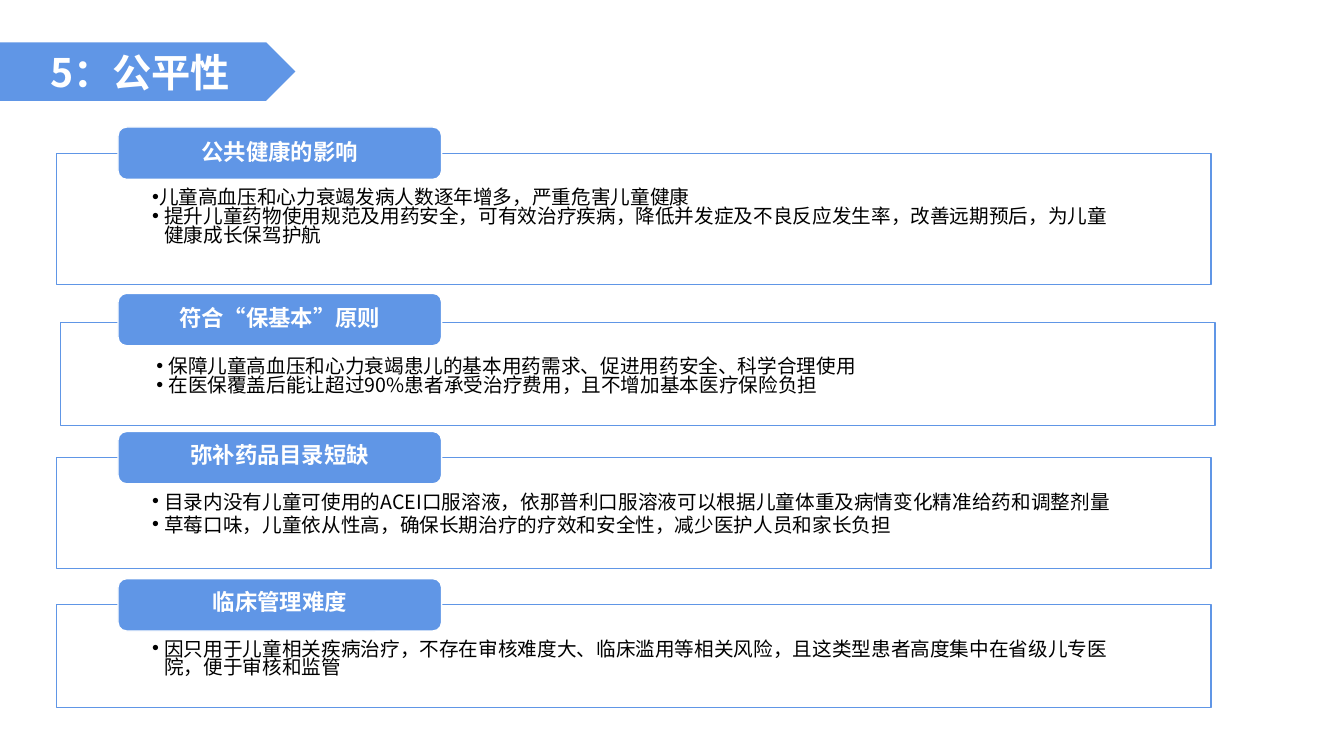
"""Build the fairness slide with a banner title and four labelled lists."""
from lxml.etree import SubElement as Sub
from pptx import Presentation
from pptx.dml.color import RGBColor
from pptx.enum.shapes import MSO_SHAPE as Kind
from pptx.enum.text import MSO_ANCHOR as Anchor, MSO_AUTO_SIZE as Auto, PP_ALIGN as Align
from pptx.oxml.ns import qn
from pptx.util import Inches, Pt

BLUE, WHITE, BLACK = "6096E6", "FFFFFF", "000000"
FACE = "Noto Sans CJK SC"
TITLE = "5：公平性"
COMP = 4
LEFT, WIDE = 0.56, 11.45
HANG = 0.12

PARTS = [
    dict(head="公共健康的影响", x=LEFT, top=1.52, tall=1.3, tab=1.26, gap=0.9, after=0, lines=[
        ("儿童高血压和心力衰竭发病人数逐年增多，严重危害儿童健康", 0),
        ("提升儿童药物使用规范及用药安全，可有效治疗疾病，降低并发症及不良反应发生率，"
         "改善远期预后，为儿童健康成长保驾护航", HANG)]),
    dict(head="符合“保基本”原则", x=0.6, top=3.2, tall=1.02, tab=2.91, gap=0.9, after=0, lines=[
        ("保障儿童高血压和心力衰竭患儿的基本用药需求、促进用药安全、科学合理使用", HANG),
        ("在医保覆盖后能让超过90%患者承受治疗费用，且不增加基本医疗保险负担", HANG)]),
    dict(head="弥补药品目录短缺", x=LEFT, top=4.54, tall=1.1, tab=4.28, gap=0.7, after=3, lines=[
        ("目录内没有儿童可使用的ACEI口服溶液，依那普利口服溶液可以根据儿童体重及病情变化"
         "精准给药和调整剂量", HANG),
        ("草莓口味，儿童依从性高，确保长期治疗的疗效和安全性，减少医护人员和家长负担", HANG)]),
    dict(head="临床管理难度", x=LEFT, top=6, tall=1.02, tab=5.74, gap=0.7, after=0, lines=[
        ("因只用于儿童相关疾病治疗，不存在审核难度大、临床滥用等相关风险，"
         "且这类型患者高度集中在省级儿专医院，便于审核和监管", HANG)]),
]


def tint(code):
    return RGBColor.from_string(code)


def apply(item, **vals):
    for name, val in vals.items():
        setattr(item, name, val)


class Deck:
    def __init__(self):
        self.prs = Presentation()
        apply(self.prs, slide_width=Inches(13.33), slide_height=Inches(7.5))
        self.slide = self.prs.slides.add_slide(self.prs.slide_layouts[COMP])
        self.bodies = [h for h in self.slide.placeholders if h.placeholder_format.idx in range(1, 5)]

    def place(self, item, x, y, wide, tall):
        apply(item, left=Inches(x), top=Inches(y), width=Inches(wide), height=Inches(tall))

    def paint(self, item, fill, line=None):
        item.fill.solid()
        item.fill.fore_color.rgb = tint(fill)
        if line:
            item.line.color.rgb = tint(line)
            item.line.width = Pt(1)
        else:
            item.line.fill.background()

    def frame(self, item, anchor, pads=(0, 0, 0, 0)):
        sides = ("margin_left", "margin_top", "margin_right", "margin_bottom")
        apply(item.text_frame, auto_size=Auto.NONE, word_wrap=True, vertical_anchor=anchor,
              **{side: Inches(pad) for side, pad in zip(sides, pads)})

    def say(self, para, text, size, color, bold, **form):
        apply(para, **{"space_before": Pt(0), "space_after": Pt(0), **form})
        run = para.add_run()
        run.text = text
        apply(run.font, size=Pt(size), bold=bold, name=FACE)
        run.font.color.rgb = tint(color)
        Sub(run._r.get_or_add_rPr(), qn("a:ea"), typeface=FACE)

    def shape(self, kind, box, fill, line=None):
        item = self.slide.shapes.add_shape(kind, *map(Inches, box))
        item.shadow.inherit = False
        self.paint(item, fill, line)
        return item

    def title(self, text):
        self.shape(Kind.PENTAGON, (0, 0.42, 2.93, 0.58), BLUE)
        item = self.slide.shapes.title
        self.place(item, 0, 0.42, 2.78, 0.58)
        self.frame(item, Anchor.MIDDLE)
        self.say(item.text_frame.paragraphs[0], text, 28, WHITE, True, alignment=Align.CENTER)
        self.slide.shapes.element.append(item.element)

    def panel(self, item, part):
        self.place(item, part["x"], part["top"], WIDE, part["tall"])
        self.paint(item, WHITE, BLUE)
        color = item.element.spPr.find(qn("a:solidFill"))[0]
        Sub(color, qn("a:alpha"), val="90000")
        self.frame(item, Anchor.TOP, (0.95, 0.36, 0.95, 0.11))
        for num, (text, left) in enumerate(part["lines"]):
            body = item.text_frame
            para = body.add_paragraph() if num else body.paragraphs[0]
            self.say(para, text, 14, BLACK, False, level=1, alignment=Align.LEFT,
                     line_spacing=0.8, space_after=Pt(part["after"]))
            props = para._p.get_or_add_pPr()
            props.set("marL", str(Inches(left)))
            props.set("indent", str(-Inches(HANG)))
            Sub(props, qn("a:buChar"), char="•")

    def label(self, part):
        item = self.shape(Kind.ROUNDED_RECTANGLE, (1.17, part["tab"], 3.21, 0.52), BLUE, WHITE)
        self.frame(item, Anchor.MIDDLE, (0.32, 0, 0.32, 0))
        self.say(item.text_frame.paragraphs[0], part["head"], 16, WHITE, True,
                 alignment=Align.CENTER, line_spacing=part["gap"])


def main():
    deck = Deck()
    deck.title(TITLE)
    for body, part in zip(deck.bodies, PARTS):
        deck.panel(body, part)
        deck.label(part)
    deck.prs.save("out.pptx")


if __name__ == "__main__":
    main()
